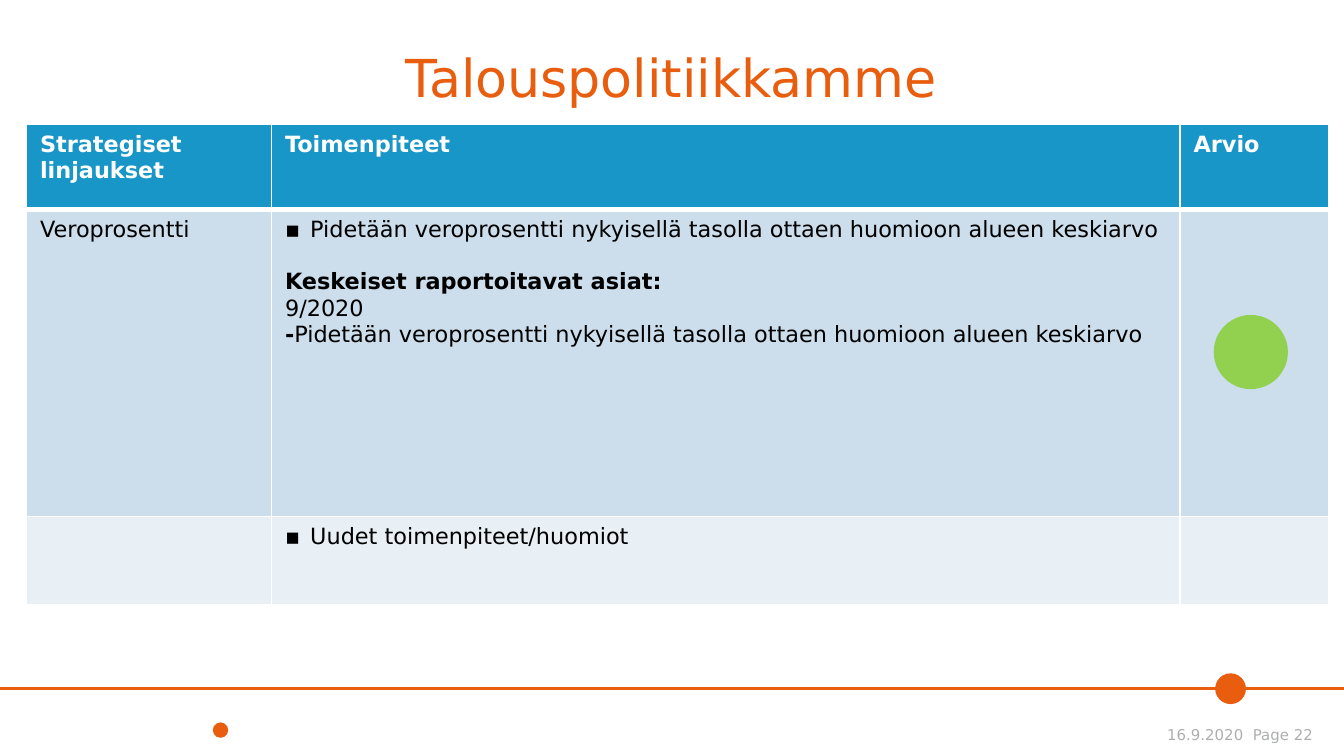
from lxml import etree
from pptx import Presentation
from pptx import util as u
from pptx.dml.color import RGBColor
from pptx.enum import shapes, text
from pptx.oxml import ns

SCALE = 9525
FONT = "DejaVu Sans"
ORANGE = RGBColor(0xE9, 0x5D, 0x0F)
GREY = RGBColor(0xAD, 0xAE, 0xAF)
GREEN = RGBColor(0x92, 0xD0, 0x50)
BLUE = RGBColor(0x18, 0x96, 0xC8)
PALE_BLUE = RGBColor(0xCC, 0xDD, 0xEB)
PALEST_BLUE = RGBColor(0xE8, 0xEF, 0xF5)
BLACK = RGBColor(0, 0, 0)
WHITE = RGBColor(0xFF, 0xFF, 0xFF)

POLICY = "Pidetään veroprosentti nykyisellä tasolla ottaen huomioon alueen keskiarvo"
COLUMNS = (175, 649, 106)
ROWS = ((61, BLUE), (219, PALE_BLUE), (63, PALEST_BLUE))


def px(*lengths):
    """Turn pixel lengths into EMU."""
    return [u.Emu(length * SCALE) for length in lengths]


def add_bullet(para, indent=18):
    """Give a paragraph a square bullet with a hanging indent."""
    props = para._p.get_or_add_pPr()
    props.set("marL", str(indent * SCALE))
    props.set("indent", str(-indent * SCALE))
    etree.SubElement(props, ns.qn("a:buFont")).set("typeface", FONT)
    etree.SubElement(props, ns.qn("a:buChar")).set("char", "▪")


def write(para, words, size=12, color=BLACK, bold=False, align=None,
          spacing=None, before=None, bullet=False):
    """Add a formatted span of words to a paragraph."""
    if bullet:
        add_bullet(para)
    if align is not None:
        para.alignment = align
    if spacing is not None:
        para.line_spacing = spacing
    if before is not None:
        para.space_before = u.Pt(before)
    span = para.add_run()
    span.text = words
    span.font.name = FONT
    span.font.size = u.Pt(size)
    span.font.bold = bold
    span.font.color.rgb = color


def add_label(page, box, words, **style):
    """Place a bottom-anchored text box without insets."""
    frame = page.shapes.add_textbox(*px(*box)).text_frame
    frame.word_wrap = True
    frame.vertical_anchor = text.MSO_ANCHOR.BOTTOM
    frame.margin_left = frame.margin_top = frame.margin_right = frame.margin_bottom = 0
    write(frame.paragraphs[0], words, **style)


def add_dot(page, box, color):
    """Draw a plain filled ellipse."""
    dot = page.shapes.add_shape(shapes.MSO_SHAPE.OVAL, *px(*box))
    dot.shadow.inherit = False
    dot.fill.solid()
    dot.fill.fore_color.rgb = color
    dot.line.fill.background()


def add_footer(page, box):
    """Draw the rule, its two dots and the date with the page number."""
    left, top, width, height = box
    rule = page.shapes.add_connector(
        shapes.MSO_CONNECTOR.STRAIGHT, *px(left, top, left + width, top))
    rule.line.color.rgb = ORANGE
    rule.line.width = u.Pt(1.5)
    etree.SubElement(rule._element.spPr, ns.qn("a:effectLst"))
    add_label(page, (left + 604, top + 20, 334, 19), "16.9.2020  Page 22",
              size=8, color=GREY, align=text.PP_ALIGN.RIGHT)
    add_dot(page, (left + 868, top - 11, 22, 22), ORANGE)
    add_dot(page, (left + 152, top + 24, 11, 11), ORANGE)


def set_borders(cell, bottom):
    """Line a cell in white, with its own bottom width in points."""
    props = cell._tc.get_or_add_tcPr()
    for side, width in (("L", 1), ("R", 1), ("T", 1), ("B", bottom)):
        line = etree.SubElement(props, ns.qn("a:ln" + side), w=str(u.Pt(width)))
        fill = etree.SubElement(line, ns.qn("a:solidFill"))
        etree.SubElement(fill, ns.qn("a:srgbClr"), val=str(WHITE))


def add_policy_table(page, box):
    """Build the table of guidelines, measures and assessment."""
    frame = page.shapes.add_table(len(ROWS), len(COLUMNS), *px(*box))
    table = frame.table
    table.horz_banding = False
    for column, width in zip(table.columns, COLUMNS):
        column.width = px(width)[0]
    for number, (row, (height, color)) in enumerate(zip(table.rows, ROWS)):
        row.height = px(height)[0]
        for cell in row.cells:
            set_borders(cell, 3 if number == 0 else 1)
            cell.fill.solid()
            cell.fill.fore_color.rgb = color
    for cell, words in zip(table.rows[0].cells,
                           ("Strategiset linjaukset", "Toimenpiteet", "Arvio")):
        write(cell.text_frame.paragraphs[0], words, color=WHITE, bold=True)
    write(table.cell(1, 0).text_frame.paragraphs[0], "Veroprosentti")
    measures = table.cell(1, 1).text_frame
    write(measures.paragraphs[0], POLICY, bullet=True)
    write(measures.add_paragraph(), "Keskeiset raportoitavat asiat:", bold=True, before=14)
    write(measures.add_paragraph(), "9/2020")
    report = measures.add_paragraph()
    write(report, "-", bold=True)
    write(report, POLICY)
    write(table.cell(2, 1).text_frame.paragraphs[0], "Uudet toimenpiteet/huomiot",
          bullet=True)
    left, top = box[:2]
    add_dot(page, (left + 848, top + 136, 53, 53), GREEN)


def main():
    """Build the slide and save the deck."""
    deck = Presentation()
    deck.slide_width, deck.slide_height = px(960, 540)
    page = deck.slides.add_slide(deck.slide_layouts[6])
    add_footer(page, (0, 492, 960, 48))
    add_label(page, (80, 14, 799, 64), "Talouspolitiikkamme", size=28,
              color=ORANGE, align=text.PP_ALIGN.CENTER, spacing=0.9)
    add_policy_table(page, (19, 89, sum(COLUMNS), sum(height for height, _ in ROWS)))
    deck.save("out.pptx")


if __name__ == "__main__":
    main()
